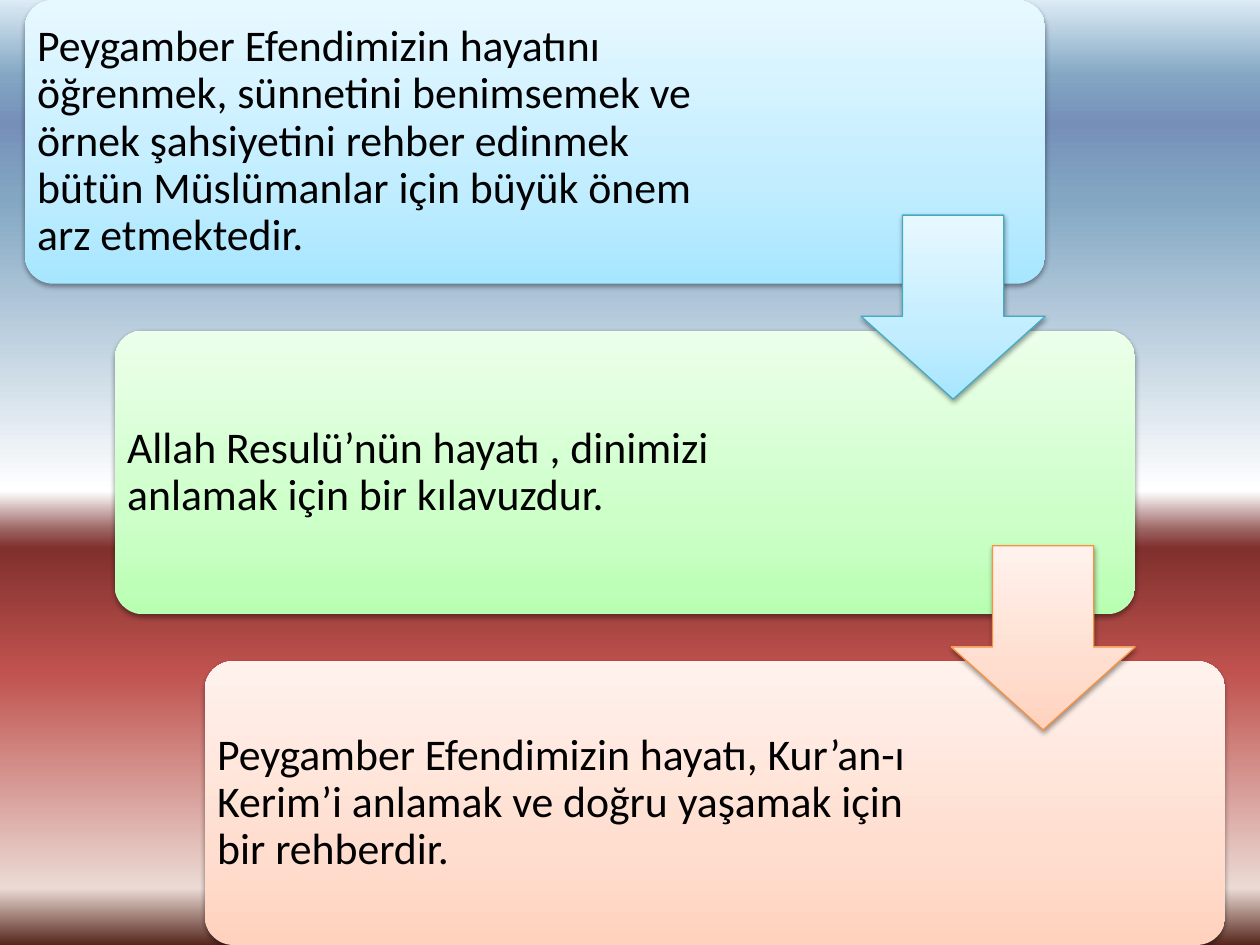
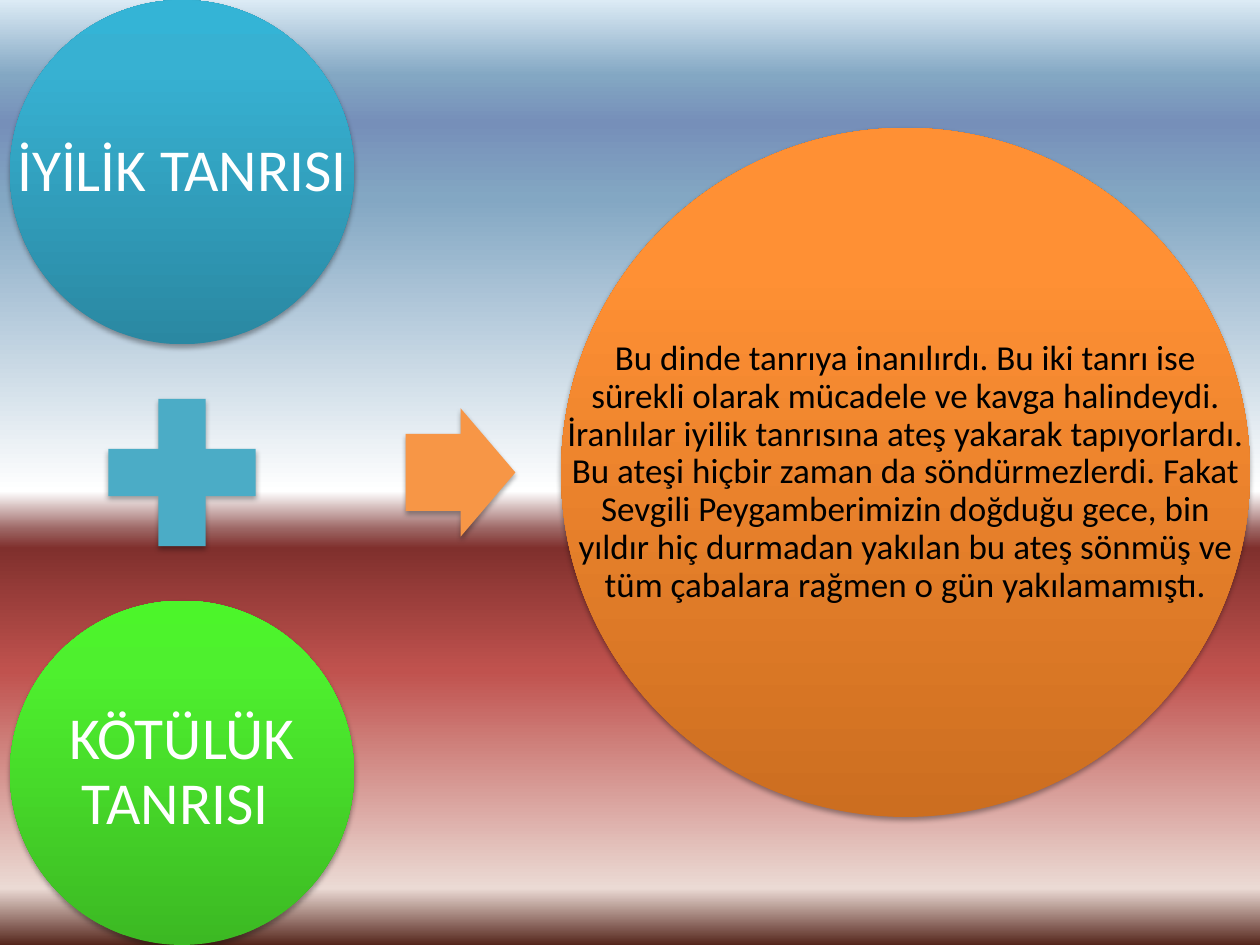
from dataclasses import dataclass

from lxml import etree
from pptx import Presentation
from pptx.dml.color import RGBColor
from pptx.enum.shapes import MSO_SHAPE
from pptx.enum.text import MSO_ANCHOR, PP_ALIGN
from pptx.oxml.ns import qn
from pptx.util import Cm, Pt

CARD, DISC = MSO_SHAPE.ROUNDED_RECTANGLE, MSO_SHAPE.OVAL
DOWN, RIGHT, PLUS = MSO_SHAPE.DOWN_ARROW, MSO_SHAPE.RIGHT_ARROW, MSO_SHAPE.MATH_PLUS
MIDDLE = MSO_ANCHOR.MIDDLE
LEFT, CENTER = PP_ALIGN.LEFT, PP_ALIGN.CENTER
WIDE, HIGH = 25.4, 19.05


@dataclass(frozen=True)
class Theme:
    font: str = "Calibri"
    dark: str = "000000"
    light: str = "FFFFFF"
    card_size: int = 25
    god_size: int = 34
    story_size: int = 20
    teal: str = "4BACC6"
    orange: str = "F79646"
    sky: tuple = ((0, "DCEBF5"), (8, "83A7C3"), (13, "768FB9"), (21, "83A7C3"),
                  (52, "FFFFFF"), (56, "9C6563"), (58, "80302D"), (71, "C0524E"),
                  (94, "EBDAD4"), (100, "55261C"))
    pale_blue: tuple = ((0, "A7E6FF"), (35, "C1EDFF"), (100, "E7F8FF"))
    pale_green: tuple = ((0, "B9FFB2"), (35, "CDFFC9"), (100, "ECFFEA"))
    pale_peach: tuple = ((0, "FFD2BD"), (35, "FFDED0"), (100, "FFF2ED"))
    deep_blue: tuple = ((0, "2A88A2"), (80, "37B1D2"), (100, "34B4D6"))
    deep_green: tuple = ((0, "3CB923"), (80, "4EF02E"), (100, "4CF52A"))
    deep_orange: tuple = ((0, "CC6E20"), (80, "FF9034"), (100, "FF9136"))
    blue_edge: str = "46AAC5"
    peach_edge: str = "F69240"
    soft: tuple = (38, 1.6)    # shadow opacity in percent, distance in points
    strong: tuple = (35, 1.8)


THEME = Theme()
CARDS = (
    ("Peygamber Efendimizin hayatını öğrenmek, sünnetini benimsemek ve örnek "
     "şahsiyetini rehber edinmek bütün Müslümanlar için büyük önem arz etmektedir.",
     THEME.pale_blue, 14.73),
    ("Allah Resulü’nün hayatı , dinimizi anlamak için bir kılavuzdur.",
     THEME.pale_green, 15.04),
    ("Peygamber Efendimizin hayatı, Kur’an-ı Kerim’i anlamak ve doğru yaşamak "
     "için bir rehberdir.", THEME.pale_peach, 15.04),
)
ARROWS = ((THEME.pale_blue, THEME.blue_edge), (THEME.pale_peach, THEME.peach_edge))
GODS = (("İYİLİK TANRISI ", THEME.deep_blue), ("KÖTÜLÜK TANRISI ", THEME.deep_green))
STORY = ("Bu dinde tanrıya inanılırdı. Bu iki tanrı ise sürekli olarak mücadele ve "
         "kavga halindeydi. İranlılar iyilik tanrısına ateş yakarak tapıyorlardı. "
         "Bu ateşi hiçbir zaman da söndürmezlerdi. Fakat Sevgili Peygamberimizin "
         "doğduğu gece, bin yıldır hiç durmadan yakılan bu ateş sönmüş ve tüm "
         "çabalara rağmen o gün yakılamamıştı.")


def assign(target, values):
    for name, value in values.items():
        setattr(target, name, value)


def add_node(parent, tag, **values):
    node = etree.SubElement(parent, qn(tag))
    for name, value in values.items():
        node.set(name, str(value))
    return node


def blend(parent, stops, angle):
    """Swap the solid fill of parent for a gradient."""
    solid = parent.find(qn("a:solidFill"))
    grad = etree.Element(qn("a:gradFill"), rotWithShape="1")
    parent.replace(solid, grad)
    chain = add_node(grad, "a:gsLst")
    for place, color in stops:
        stop = add_node(chain, "a:gs", pos=place * 1000)
        add_node(stop, "a:srgbClr", val=color)
    add_node(grad, "a:lin", ang=angle * 60000, scaled=0)


def cast(shape, shadow):
    alpha, gap = shadow
    shape.shadow.inherit = False
    effects = shape.element.spPr.find(qn("a:effectLst"))
    outer = add_node(effects, "a:outerShdw", blurRad=Pt(3.1), dist=Pt(gap),
                     dir=90 * 60000, rotWithShape=0)
    color = add_node(outer, "a:srgbClr", val=THEME.dark)
    add_node(color, "a:alpha", val=alpha * 1000)


def add_form(slide, kind, box, fill, shadow, edge=None, adjust=()):
    shape = slide.shapes.add_shape(kind, *map(Cm, box))
    for index, value in enumerate(adjust):
        shape.adjustments[index] = value
    plain = isinstance(fill, str)
    shape.fill.solid()
    shape.fill.fore_color.rgb = RGBColor.from_string(fill if plain else THEME.light)
    if not plain:
        blend(shape.element.spPr, fill, 270)
    if edge:
        shape.line.color.rgb = RGBColor.from_string(edge)
        shape.line.width = Pt(0.75)
    else:
        shape.line.fill.background()
    cast(shape, shadow)


def add_text(slide, box, text, size, color, align, inset):
    frame = slide.shapes.add_textbox(*map(Cm, box)).text_frame
    sides = ("left", "top", "right", "bottom")
    assign(frame, {f"margin_{side}": Cm(inset) for side in sides})
    assign(frame, {"word_wrap": True, "vertical_anchor": MIDDLE})
    para = frame.paragraphs[0]
    assign(para, {"alignment": align, "line_spacing": 0.9})
    run = para.add_run()
    run.text = text
    assign(run.font, {"name": THEME.font, "size": Pt(size)})
    run.font.color.rgb = RGBColor.from_string(color)


def add_disc(slide, box, text, fill, size, color, inset):
    add_form(slide, DISC, box, fill, THEME.strong)
    add_text(slide, box, text, size, color, CENTER, inset)


def add_stairs(slide, box):
    """Place the cards corner to corner, with an arrow over each gap."""
    left, top, wide, high = box
    card_w, card_h, arrow = 20.57, 5.72, 3.71
    step_x = (wide - card_w) / (len(CARDS) - 1)
    step_y = (high - card_h) / (len(CARDS) - 1)
    for row, (text, fill, text_w) in enumerate(CARDS):
        x, y = left + row * step_x, top + row * step_y
        add_form(slide, CARD, (x, y, card_w, card_h), fill, THEME.soft, adjust=(0.1,))
        add_text(slide, (x, y, text_w, card_h), text, THEME.card_size,
                 THEME.dark, LEFT, 0.25)
    for row, (fill, edge) in enumerate(ARROWS):
        x = left + row * step_x + card_w - arrow
        y = top + row * step_y + (card_h + step_y - arrow) / 2
        add_form(slide, DOWN, (x, y, arrow, arrow), fill, THEME.soft, edge, (0.55, 0.45))


def add_gods(slide, box):
    """Place one disc at each end of the column and a plus between them."""
    left, top, wide, high = box
    plus = 4.04
    for (text, fill), y in zip(GODS, (top, top + high - wide)):
        add_disc(slide, (left, y, wide, wide), text, fill,
                 THEME.god_size, THEME.light, 0.13)
    spot = (left + (wide - plus) / 2, top + (high - plus) / 2, plus, plus)
    add_form(slide, PLUS, spot, THEME.teal, THEME.strong)


def add_result(slide, box):
    """Place an arrow at the left and the story disc at the right."""
    left, top, wide, high = box
    arrow_w, arrow_h, disc = 2.21, 2.59, 13.89
    mid = top + high / 2
    add_form(slide, RIGHT, (left, mid - arrow_h / 2, arrow_w, arrow_h),
             THEME.orange, THEME.strong, adjust=(0.6, 0.5))
    add_disc(slide, (left + wide - disc, mid - disc / 2, disc, disc), STORY,
             THEME.deep_orange, THEME.story_size, THEME.dark, 0.08)


def main():
    deck = Presentation()
    assign(deck, {"slide_width": Cm(WIDE), "slide_height": Cm(HIGH)})
    master = deck.slide_master
    master.background.fill.solid()
    master.background.fill.fore_color.rgb = RGBColor.from_string(THEME.light)
    blend(master.element.find(".//" + qn("p:bgPr")), THEME.sky, 90)
    blank = deck.slide_layouts[6]

    add_stairs(deck.slides.add_slide(blank), (0.5, 0, 24.2, HIGH))
    dual = deck.slides.add_slide(blank)
    add_gods(dual, (0.2, 0, 6.94, HIGH))
    add_result(dual, (8.18, 0, 17.02, HIGH))
    deck.save("out.pptx")


if __name__ == "__main__":
    main()
